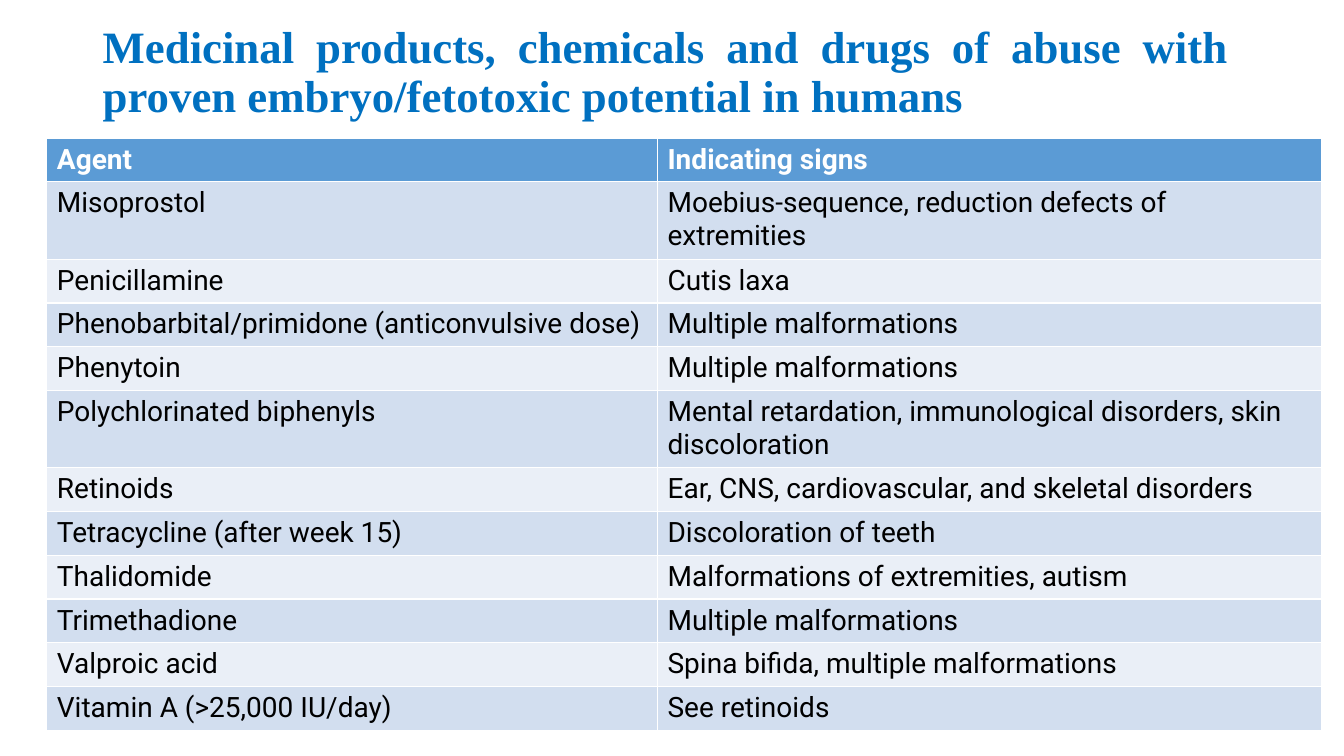
import pptx
import pptx.util
import pptx.dml.color
import pptx.enum.text

Cm = pptx.util.Cm
Pt = pptx.util.Pt

COLORS = {
    "title": "0070C0",
    "header": "5B9BD5",
    "odd": "D2DEEF",
    "even": "EAEFF7",
    "white": "FFFFFF",
    "black": "000000",
}

TITLE_FORMAT = {"name": "Times New Roman", "size": Pt(32), "bold": True}
HEADER_FORMAT = {"name": "Roboto", "size": Pt(20), "bold": True}
BODY_FORMAT = {"name": "Roboto", "size": Pt(20), "bold": False}

ROWS = [
    ("Agent", "Indicating signs"),
    ("Misoprostol", "Moebius-sequence, reduction defects of extremities"),
    ("Penicillamine", "Cutis laxa"),
    ("Phenobarbital/primidone (anticonvulsive dose)", "Multiple malformations"),
    ("Phenytoin", "Multiple malformations"),
    ("Polychlorinated biphenyls",
     "Mental retardation, immunological disorders, skin discoloration"),
    ("Retinoids", "Ear, CNS, cardiovascular, and skeletal disorders"),
    ("Tetracycline (after week 15)", "Discoloration of teeth"),
    ("Thalidomide", "Malformations of extremities, autism"),
    ("Trimethadione", "Multiple malformations"),
    ("Valproic acid", "Spina bifida, multiple malformations"),
    ("Vitamin A (>25,000 IU/day)", "See retinoids"),
]
COL_WIDTHS = [Cm(15.39), Cm(16.73)]
ROW_HEIGHT = Cm(1.04)


def rgb(key):
    return pptx.dml.color.RGBColor.from_string(COLORS[key])


def add_run(p, text, values, color):
    r = p.add_run()
    r.text = text
    for name, value in values.items():
        setattr(r.font, name, value)
    r.font.color.rgb = rgb(color)


prs = pptx.Presentation()
prs.slide_width = Cm(33.87)
prs.slide_height = Cm(19.05)
s = prs.slides.add_slide(prs.slide_layouts[6])

sp = s.shapes.add_textbox(Cm(2.34), Cm(0.76), Cm(28.88), Cm(2.18))
tf = sp.text_frame
tf.word_wrap = True
tf.vertical_anchor = pptx.enum.text.MSO_ANCHOR.MIDDLE
p = tf.paragraphs[0]
p.alignment = pptx.enum.text.PP_ALIGN.JUSTIFY
p.line_spacing = 0.9
add_run(
    p,
    "Medicinal products, chemicals and drugs of abuse with proven "
    "embryo/fetotoxic potential in humans",
    TITLE_FORMAT,
    "title",
)

table = s.shapes.add_table(
    len(ROWS), len(COL_WIDTHS), Cm(1.18), Cm(3.48),
    sum(COL_WIDTHS), ROW_HEIGHT * len(ROWS),
).table
for column, width in zip(table.columns, COL_WIDTHS):
    column.width = width

for i, texts in enumerate(ROWS):
    table.rows[i].height = ROW_HEIGHT
    if i == 0:
        fill, values, color = "header", HEADER_FORMAT, "white"
    else:
        fill, values, color = "odd" if i % 2 else "even", BODY_FORMAT, "black"
    for j, text in enumerate(texts):
        cell = table.cell(i, j)
        cell.fill.solid()
        cell.fill.fore_color.rgb = rgb(fill)
        add_run(cell.text_frame.paragraphs[0], text, values, color)

prs.save("out.pptx")
